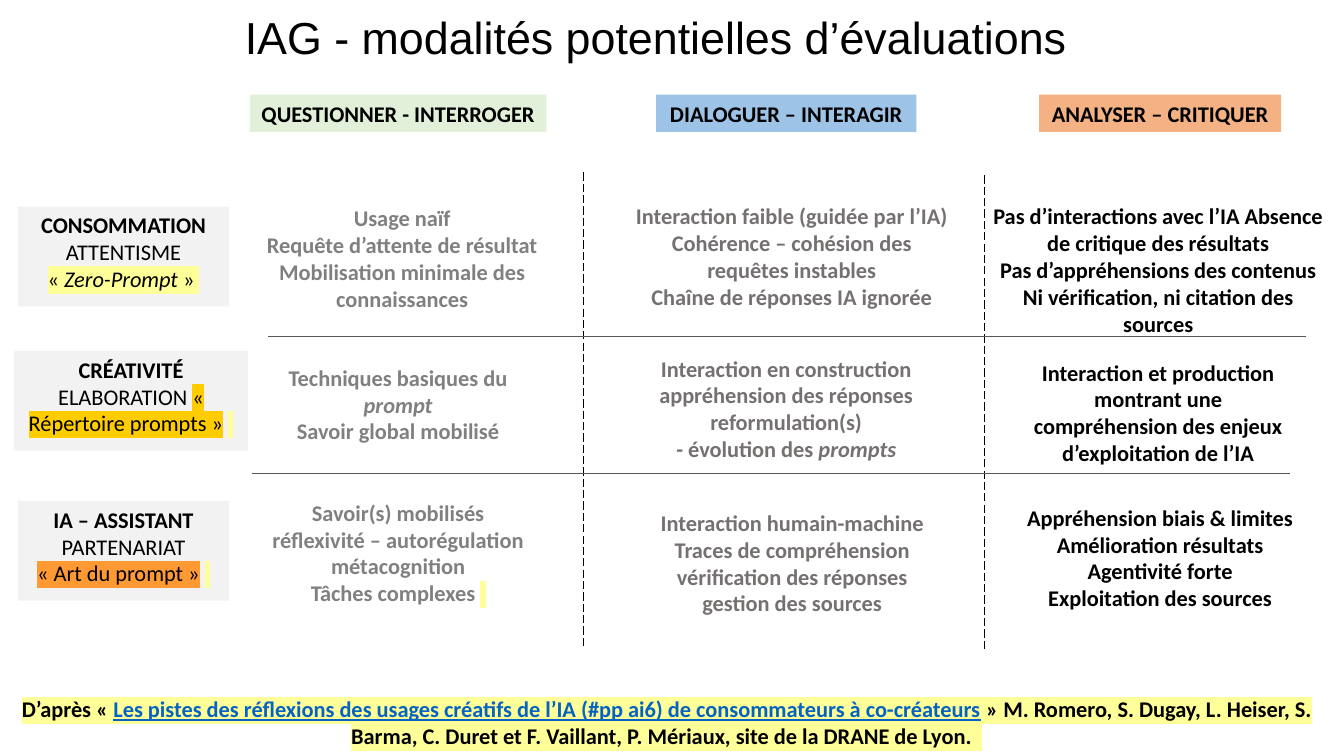
from lxml import etree
from pptx import Presentation
from pptx.dml.color import RGBColor
from pptx.enum.dml import MSO_LINE
from pptx.enum.shapes import MSO_CONNECTOR, MSO_SHAPE
from pptx.enum.text import MSO_ANCHOR, PP_ALIGN
from pptx.oxml.ns import qn
from pptx.util import Pt

RECT = MSO_SHAPE.RECTANGLE
STRAIGHT = MSO_CONNECTOR.STRAIGHT
LONG_DASH = MSO_LINE.LONG_DASH
CENTER = PP_ALIGN.CENTER
TOP, MIDDLE = MSO_ANCHOR.TOP, MSO_ANCHOR.MIDDLE

BLACK = RGBColor(0x00, 0x00, 0x00)
GREY = RGBColor(0x80, 0x80, 0x80)
WARM_GREY = RGBColor(0x76, 0x71, 0x71)
RULE_GREY = RGBColor(0x59, 0x59, 0x59)
LINK_BLUE = RGBColor(0x05, 0x63, 0xC1)
PALE_GREY = RGBColor(0xF2, 0xF2, 0xF2)
GREEN = RGBColor(0xE2, 0xF0, 0xD9)
BLUE = RGBColor(0x9D, 0xC3, 0xE6)
PEACH = RGBColor(0xF4, 0xB1, 0x83)
YELLOW = RGBColor(0xFF, 0xFF, 0x99)
GOLD = RGBColor(0xFF, 0xCC, 0x00)
ORANGE = RGBColor(0xFF, 0x99, 0x33)

BOLD = {"bold": True}
ITALIC = {"bold": True, "italic": True}
MARK = {"highlight": YELLOW}
BAR = (" ", MARK)

HEADERS = [
    ("QUESTIONNER - INTERROGER", 211.7, GREEN),
    ("DIALOGUER – INTERAGIR", 185.8, BLUE),
    ("ANALYSER – CRITIQUER", 172.8, PEACH),
]
COLUMN_CENTERS = [284.4, 561.6, 828.7]
COLUMN_COLORS = [GREY, WARM_GREY, BLACK]

STAGES = [
    (13, 147.6, 150.5, [
        [("CONSOMMATION ", BOLD), ("ATTENTISME", {})],
        [("« ", MARK), ("Zero-Prompt", {"italic": True, **MARK}), (" » ", MARK)],
    ]),
    (10.1, 250.6, 167, [
        [("CRÉATIVITÉ ", BOLD), ("ELABORATION ", {}),
         ("« Répertoire prompts »", {"highlight": GOLD}), (" ", {}), BAR],
    ]),
    (13, 357.8, 150.5, [
        [("IA – ASSISTANT", BOLD)],
        [("PARTENARIAT", {})],
        [("« Art du prompt »", {"highlight": ORANGE}), (" ", {}), BAR],
    ]),
]

CELLS = [
    [
        (2.9, 142.6, 233.3, [
            [("Usage naïf", BOLD)],
            [("Requête d’attente de résultat Mobilisation minimale des connaissances", BOLD)],
        ]),
        (4, 141.1, 239.8, [
            [("Interaction faible (guidée par l’IA)", BOLD)],
            [("Cohérence – cohésion des requêtes instables", BOLD)],
            [("Chaîne de réponses IA ignorée", BOLD)],
        ]),
        (-1.4, 141.1, 250.6, [
            [("Pas d’interactions avec l’IA Absence de critique des résultats", BOLD)],
            [("Pas d’appréhensions des contenus", BOLD)],
            [("Ni vérification, ni citation des sources", BOLD)],
        ]),
    ],
    [
        (0, 256.3, 211.7, [
            [("Techniques basiques du ", BOLD), ("prompt", ITALIC)],
            [("Savoir global mobilisé", BOLD)],
        ]),
        (0, 249.8, 211.7, [
            [("Interaction en construction appréhension des réponses reformulation(s)", BOLD)],
            [("- évolution des ", BOLD), ("prompts", ITALIC)],
        ]),
        (-1.4, 252.7, 211.7, [
            [("Interaction et production montrant une compréhension des enjeux "
              "d’exploitation de l’IA", BOLD)],
        ]),
    ],
    [
        (0, 352.8, 211.7, [
            [("Savoir(s) mobilisés", BOLD)],
            [("réflexivité – autorégulation métacognition", BOLD)],
            [("Tâches complexes ", BOLD), BAR],
        ]),
        (4.3, 360, 211.7, [
            [("Interaction humain-machine", BOLD)],
            [("Traces de compréhension vérification des réponses gestion des sources", BOLD)],
        ]),
        (0, 356.4, 211.7, [
            [("Appréhension biais & limites", BOLD)],
            [("Amélioration résultats", BOLD)],
            [("Agentivité forte", BOLD)],
            [("Exploitation des sources", BOLD)],
        ]),
    ],
]

SOURCE = [[
    ("D’après « ", {**BOLD, **MARK}),
    ("Les pistes des réflexions des usages créatifs de l’IA (#pp ai6) de consommateurs "
     "à co-créateurs", {"color": LINK_BLUE, "underline": True, **BOLD, **MARK}),
    (" » M. Romero, S. Dugay, L. Heiser, S. Barma, C. Duret et F. Vaillant, P. Mériaux, "
     "site de la DRANE de Lyon. ", {**BOLD, **MARK}),
    BAR,
]]


def add_run(p, text, size=16, font="Calibri", color=BLACK, bold=False, italic=False,
            underline=False, highlight=None):
    """Append formatted text to a paragraph."""
    r = p.add_run()
    r.text = text
    r.font.size = Pt(size)
    r.font.bold, r.font.italic, r.font.underline = bold, italic, underline
    r.font.color.rgb = color
    if highlight is not None:
        mark = etree.SubElement(r.font._element, qn("a:highlight"))
        etree.SubElement(mark, qn("a:srgbClr")).set("val", str(highlight))
    r.font.name = font


def fill_text(sp, paragraphs, anchor=TOP, **fmt):
    """Write centred paragraphs of (text, format) runs into a shape."""
    tf = sp.text_frame
    tf.word_wrap = True
    tf.vertical_anchor = anchor
    for i, runs in enumerate(paragraphs):
        p = tf.add_paragraph() if i else tf.paragraphs[0]
        p.alignment = CENTER
        for text, own in runs:
            add_run(p, text, **{**fmt, **own})


def add_panel(s, x, y, w, h, fill, paragraphs, anchor=TOP):
    """Draw a filled rectangle with text."""
    sp = s.shapes.add_shape(RECT, Pt(x), Pt(y), Pt(w), Pt(h))
    sp.shadow.inherit = False
    sp.fill.solid()
    sp.fill.fore_color.rgb = fill
    sp.line.fill.background()
    fill_text(sp, paragraphs, anchor)


def add_text(s, x, y, w, h, paragraphs, **fmt):
    """Draw a wrapping text box."""
    fill_text(s.shapes.add_textbox(Pt(x), Pt(y), Pt(w), Pt(h)), paragraphs, **fmt)


def add_rule(s, x1, y1, x2, y2, color, width, dash=None):
    """Draw a straight separator."""
    line = s.shapes.add_connector(STRAIGHT, Pt(x1), Pt(y1), Pt(x2), Pt(y2))
    line.line.color.rgb = color
    line.line.width = Pt(width)
    if dash is not None:
        line.line.dash_style = dash
    etree.SubElement(line._element.spPr, qn("a:effectLst"))


def draw_title(s, x, y, w, h):
    """Place the slide title."""
    sp = s.shapes.title
    sp.left, sp.top, sp.width, sp.height = Pt(x), Pt(y), Pt(w), Pt(h)
    fill_text(sp, [[("IAG - modalités potentielles d’évaluations", {})]], MIDDLE,
              size=32, font="Arial")
    sp.text_frame.paragraphs[0].line_spacing = 0.9


def draw_headers(s, y, h):
    """Draw the three column headings on a band."""
    for center, (text, w, fill) in zip(COLUMN_CENTERS, HEADERS):
        add_panel(s, center - w / 2, y, w, h, fill, [[(text, BOLD)]], MIDDLE)


def draw_stages(s, h):
    """Draw the row labels."""
    for x, y, w, paragraphs in STAGES:
        add_panel(s, x, y, w, h, PALE_GREY, paragraphs)


def draw_cells(s, h):
    """Draw the descriptions around their column centres."""
    for row in CELLS:
        for center, color, (dx, y, w, paragraphs) in zip(COLUMN_CENTERS, COLUMN_COLORS, row):
            add_text(s, center + dx - w / 2, y, w, h, paragraphs, color=color)


def draw_separators(s, column_length, row_length):
    """Draw the dashed column rules and the thin row rules."""
    for x, y in ((416.9, 123.1), (703.4, 125.3)):
        add_rule(s, x, y, x, y + column_length, BLACK, 0.75, LONG_DASH)
    for x, y in ((191.5, 240.5), (180, 338.4)):
        add_rule(s, x, y, x + row_length, y, RULE_GREY, 0.5)


def main():
    """Build and save the slide."""
    prs = Presentation()
    prs.slide_width, prs.slide_height = Pt(960), Pt(540)
    s = prs.slides.add_slide(prs.slide_layouts[5])
    draw_title(s, 97.9, 5, 741.6, 47.5)
    draw_headers(s, 67.7, 26.6)
    draw_stages(s, 71.3)
    draw_cells(s, 88)
    draw_separators(s, 338.4, 741.6)
    add_text(s, 0, 493.2, 952.6, 46, SOURCE)
    prs.save("out.pptx")


if __name__ == "__main__":
    main()
